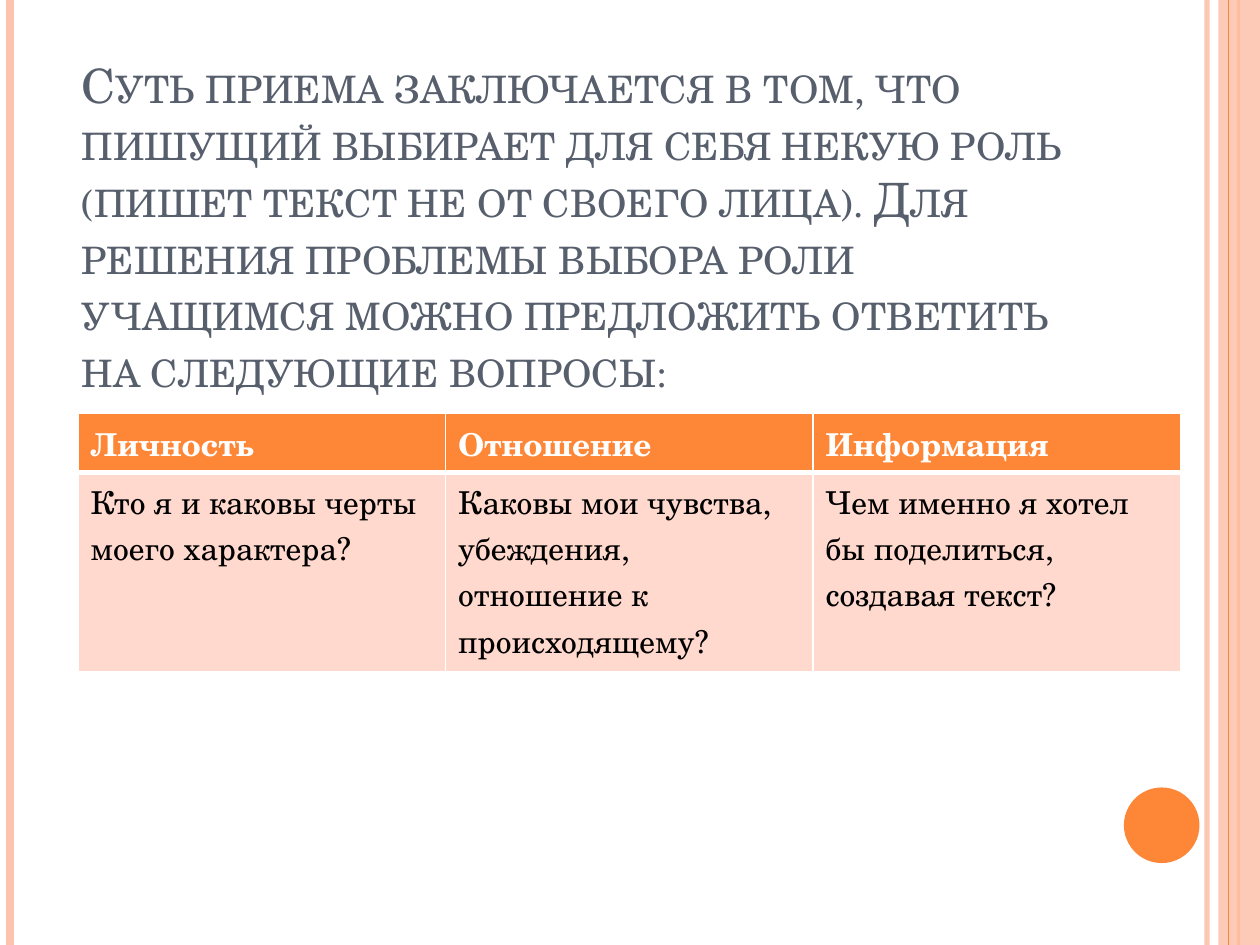
from lxml.etree import SubElement
from pptx import Presentation
from pptx.dml.color import RGBColor
from pptx.enum.shapes import MSO_CONNECTOR, MSO_SHAPE
from pptx.enum.text import MSO_ANCHOR
from pptx.oxml.ns import qn
from pptx.util import Inches, Pt

# Content
TITLE = (
    "Суть приема заключается в том, что пишущий выбирает для себя некую роль "
    "(пишет текст не от своего лица). Для решения проблемы выбора роли "
    "учащимся можно предложить ответить на следующие вопросы:"
)
QUESTIONS = [
    ("Личность", "Отношение", "Информация"),
    (
        "Кто я и каковы черты моего характера?",
        "Каковы мои чувства, убеждения, отношение к происходящему?",
        "Чем именно я хотел бы поделиться, создавая текст?",
    ),
]

# Look
COLORS = {
    "orange": "FE8637", "peach": "FEC3AE", "pale": "FFD9CE",
    "slate": "575F6D", "white": "FFFFFF", "black": "000000",
}
FONT = "TeX Gyre Schola"
TITLE_FORMAT = {"size": Pt(27), "color": "slate", "bold": False}
ROW_FORMATS = [
    {"size": Pt(18), "color": "white", "bold": True},
    {"size": Pt(18), "color": "black", "bold": False},
]
ROW_FILLS = ["orange", "pale"]
ROW_HEIGHTS = [0.47, 1.58]
ROW_BORDERS = [
    {"L": 1, "R": 1, "T": 1, "B": 3},
    {"L": 1, "R": 1, "T": 3, "B": 1},
]
# x, colour, width in points, opacity in percent
STRIPES_BELOW = [(9.58, "peach", 3, 93), (0.08, "peach", 4.5, 100), (9.83, "orange", 1.5, 100)]
STRIPES_ABOVE = [(9.75, "orange", 0.75, 100)]
SLIDE_W, SLIDE_H = 10, 7.5


def rgb(name):
    return RGBColor.from_string(COLORS[name])


def set_opacity(fill_parent, percent):
    color = fill_parent.find(".//" + qn("a:srgbClr"))
    SubElement(color, qn("a:alpha"), val=str(percent * 1000))


def write(frame, text, formats):
    run = frame.paragraphs[0].add_run()
    run.text = text
    run.font.name = FONT
    for key, value in formats.items():
        if key == "color":
            run.font.color.rgb = rgb(value)
        else:
            setattr(run.font, key, value)
    return run


def add_stripes(slide, stripes):
    for x, color, width, opacity in stripes:
        stripe = slide.shapes.add_connector(
            MSO_CONNECTOR.STRAIGHT, Inches(x), 0, Inches(x), Inches(SLIDE_H))
        stripe.line.color.rgb = rgb(color)
        stripe.line.width = Pt(width)
        properties = stripe.line._ln.getparent()
        SubElement(properties, qn("a:effectLst"))
        if opacity < 100:
            set_opacity(properties, opacity)


def add_solid(slide, kind, box, color):
    solid = slide.shapes.add_shape(kind, *map(Inches, box))
    solid.shadow.inherit = False
    solid.fill.solid()
    solid.fill.fore_color.rgb = rgb(color)
    solid.line.fill.background()
    return solid


def add_borders(cell, widths):
    properties = cell._tc.get_or_add_tcPr()
    for side, width in widths.items():
        border = SubElement(properties, qn(f"a:ln{side}"), w=str(Pt(width)))
        fill = SubElement(border, qn("a:solidFill"))
        SubElement(fill, qn("a:srgbClr"), val=COLORS["white"])


def add_title(slide):
    frame = slide.shapes.add_textbox(*map(Inches, (0.55, 0.31, 8.17, 2.89))).text_frame
    frame.word_wrap = True
    frame.vertical_anchor = MSO_ANCHOR.BOTTOM
    run = write(frame, TITLE, TITLE_FORMAT)
    run.font._element.set("cap", "small")


def add_questions(slide):
    box = map(Inches, (0.62, 3.28, 8.75, sum(ROW_HEIGHTS)))
    table = slide.shapes.add_table(len(QUESTIONS), len(QUESTIONS[0]), *box).table
    for r, texts in enumerate(QUESTIONS):
        table.rows[r].height = Inches(ROW_HEIGHTS[r])
        for c, text in enumerate(texts):
            cell = table.cell(r, c)
            add_borders(cell, ROW_BORDERS[r])
            cell.fill.solid()
            cell.fill.fore_color.rgb = rgb(ROW_FILLS[r])
            write(cell.text_frame, text, ROW_FORMATS[r])


def main():
    deck = Presentation()
    deck.slide_width, deck.slide_height = Inches(SLIDE_W), Inches(SLIDE_H)
    slide = deck.slides.add_slide(deck.slide_layouts[6])

    # Side decoration
    add_stripes(slide, STRIPES_BELOW)
    band = add_solid(slide, MSO_SHAPE.RECTANGLE, (9.67, 0, 0.33, SLIDE_H), "peach")
    set_opacity(band.fill._xPr, 87)
    add_stripes(slide, STRIPES_ABOVE)
    add_solid(slide, MSO_SHAPE.OVAL, (8.92, 6.25, 0.6, 0.6), "orange")

    # Title and table
    add_title(slide)
    add_questions(slide)
    deck.save("out.pptx")


if __name__ == "__main__":
    main()
